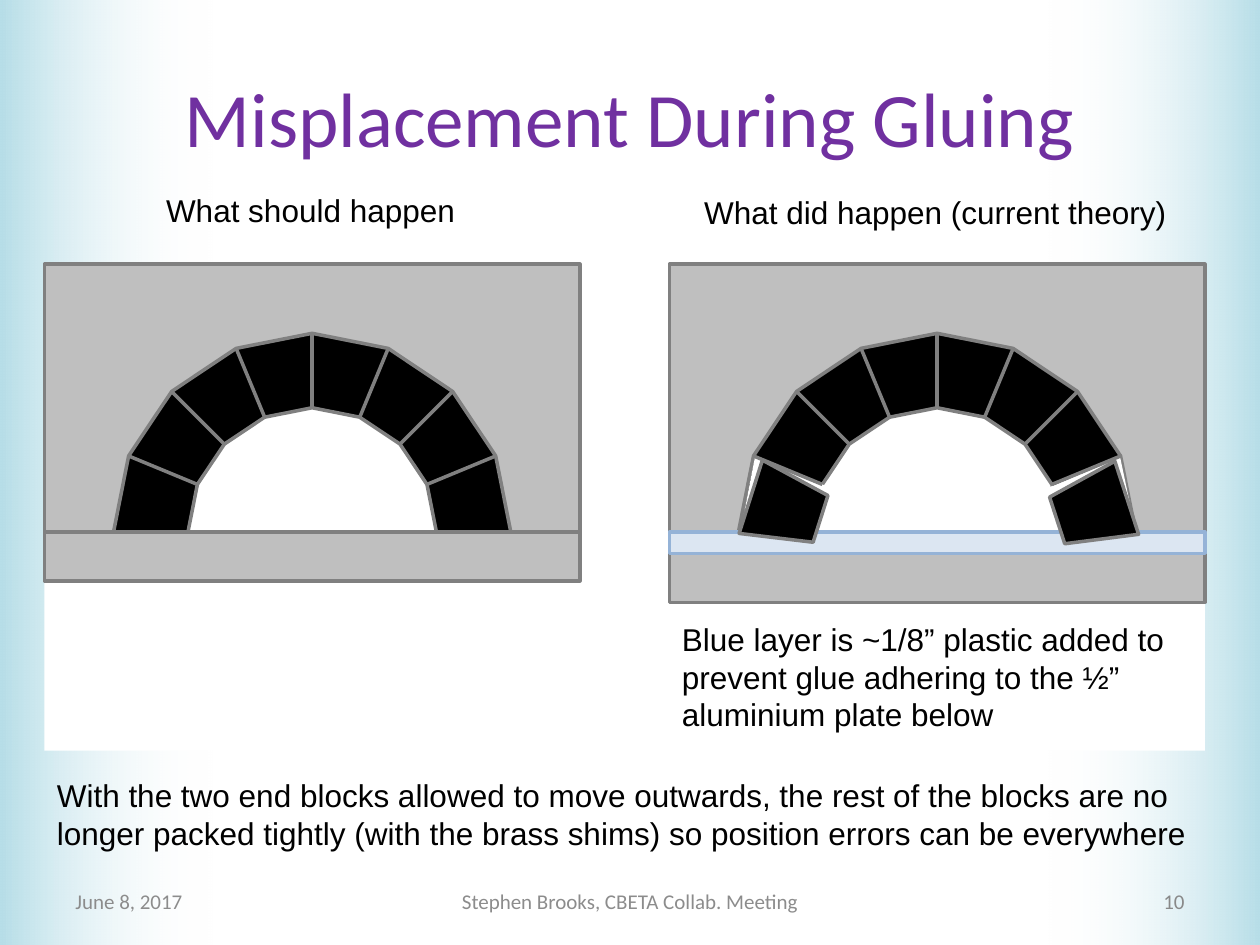
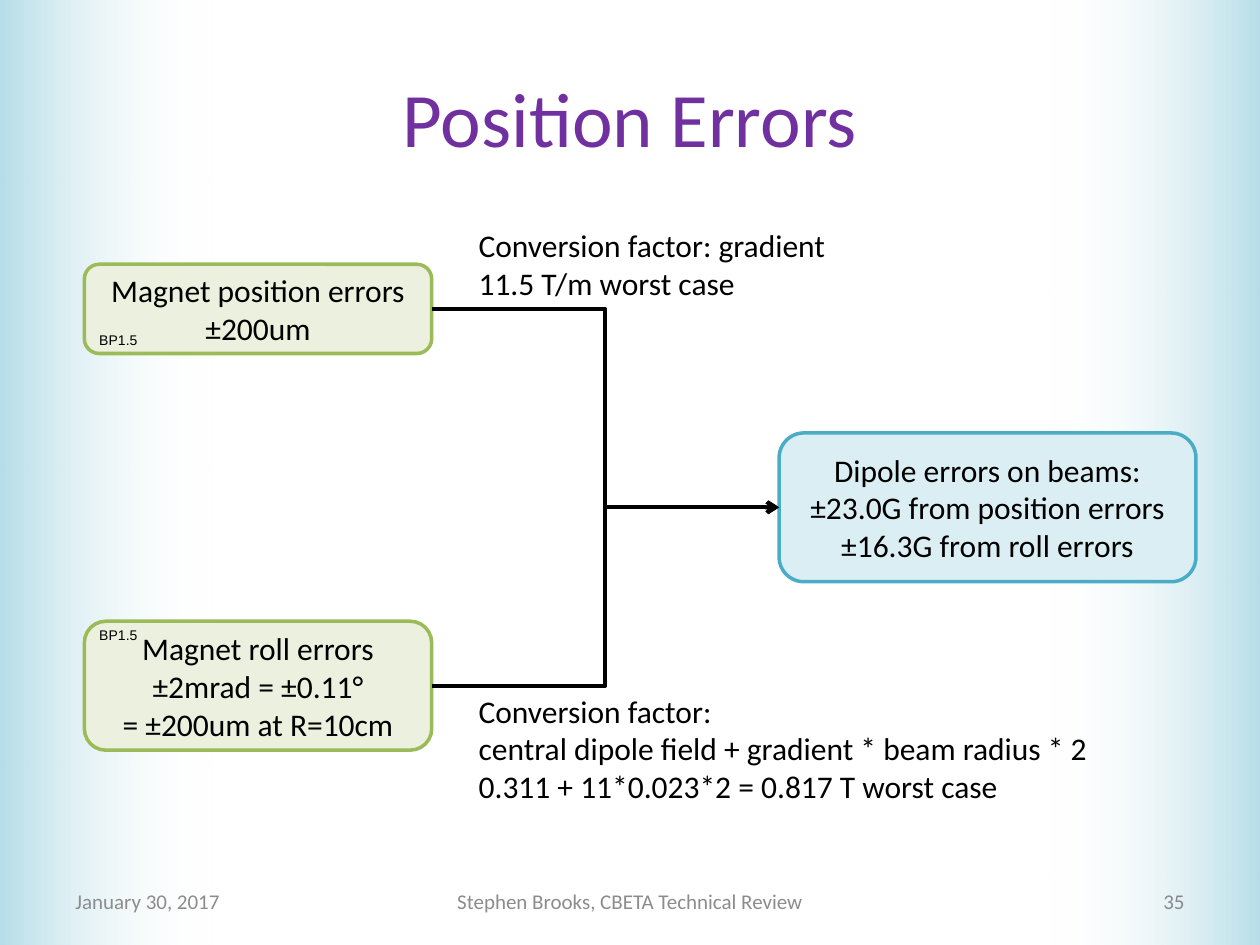
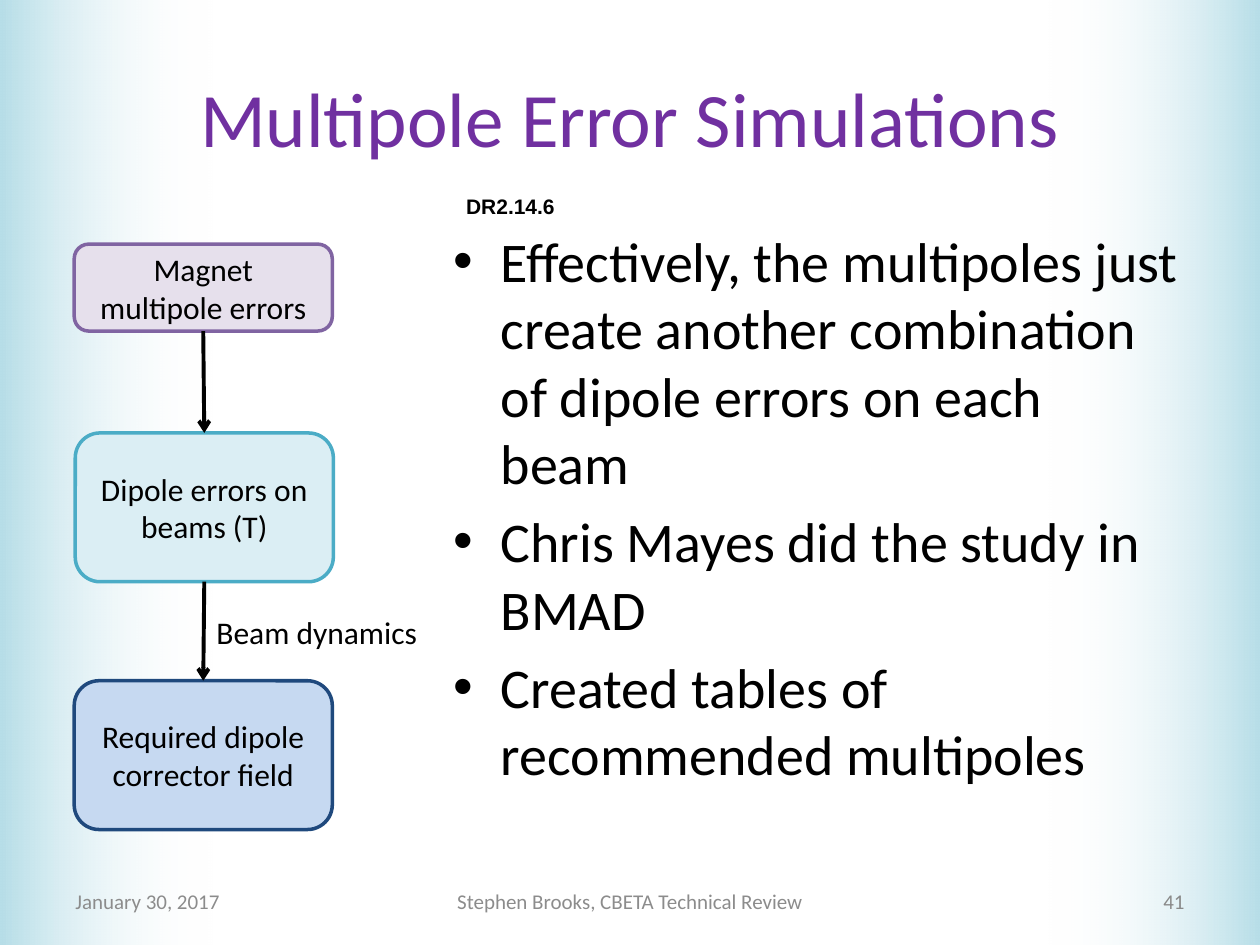
from math import cos, radians, sin

from lxml import etree
from pptx import Presentation
from pptx import util as u
from pptx.dml.color import RGBColor
from pptx.enum import shapes, text
from pptx.oxml.ns import qn

Pt = u.Pt
KIND = shapes.MSO_SHAPE
LINK = shapes.MSO_CONNECTOR
ALIGN = text.PP_ALIGN
ANCHOR = text.MSO_ANCHOR

BLACK = RGBColor(0x00, 0x00, 0x00)
WHITE = RGBColor(0xFF, 0xFF, 0xFF)
PURPLE = RGBColor(0x70, 0x30, 0xA0)
MIST = RGBColor(0xB7, 0xDE, 0xE8)
FOOT = RGBColor(0x8C, 0x8C, 0x8C)
PAGE = RGBColor(0x89, 0x89, 0x89)
STEEL = RGBColor(0xBF, 0xBF, 0xBF)
EDGE = RGBColor(0x80, 0x80, 0x80)
LAYER = RGBColor(0xDC, 0xE6, 0xF2)
RIM = RGBColor(0x95, 0xB3, 0xD7)
AQUA = (RGBColor(0xDB, 0xEE, 0xF4), RGBColor(0x4B, 0xAC, 0xC6))
GREEN = (RGBColor(0xEB, 0xF1, 0xDE), RGBColor(0x9B, 0xBB, 0x59))
LILAC = (RGBColor(0xE6, 0xE0, 0xEC), RGBColor(0x80, 0x64, 0xA2))
NAVY = (RGBColor(0xC6, 0xD9, 0xF1), RGBColor(0x1F, 0x49, 0x7D))

ARIAL = {"name": "Arial", "size": Pt(18)}
BODY = {"name": "Calibri", "size": Pt(18)}
TITLE = {"name": "Calibri", "size": Pt(44)}
SMALL = {"name": "Calibri", "size": Pt(12)}
LIST = {"name": "Calibri", "size": Pt(32)}
TAG = {"name": "Arial", "size": Pt(8)}
REF = {"name": "Arial", "size": Pt(12), "bold": True}

REVIEW = ("January 30, 2017", "Stephen Brooks, CBETA Technical Review")


def apply(obj, form):
    for key, val in form.items():
        setattr(obj, key, val)


def write(frame, lines, font, color=BLACK, align=ALIGN.LEFT, bullet=False):
    for num, line in enumerate(lines):
        para = frame.paragraphs[0] if num == 0 else frame.add_paragraph()
        para.alignment = align
        if bullet:
            props = para._p.get_or_add_pPr()
            props.set("marL", str(Pt(27)))
            props.set("indent", str(Pt(-27)))
            etree.SubElement(props, qn("a:buFont"), typeface="Arial")
            etree.SubElement(props, qn("a:buChar"), char="•")
            para.space_before = Pt(6.4 if num else 0)
        run = para.add_run()
        run.text = line
        apply(run.font, font)
        run.font.color.rgb = color


def label(slide, box, lines, font, color=BLACK, align=ALIGN.LEFT,
          wrap=True, anchor=ANCHOR.TOP, inset=None, bullet=False):
    frame = slide.shapes.add_textbox(*map(Pt, box)).text_frame
    apply(frame, {"word_wrap": wrap, "vertical_anchor": anchor})
    if not wrap:
        frame.auto_size = text.MSO_AUTO_SIZE.SHAPE_TO_FIT_TEXT
    if inset is not None:
        sides = ("left", "top", "right", "bottom")
        apply(frame, {f"margin_{side}": Pt(inset) for side in sides})
    write(frame, lines, font, color, align, bullet)


def block(slide, kind, box, fill, edge=None, turn=0, bend=None):
    shape = slide.shapes.add_shape(kind, *map(Pt, box))
    shape.shadow.inherit = False
    shape.rotation = turn
    shape.fill.solid()
    shape.fill.fore_color.rgb = fill
    if edge is None:
        shape.line.fill.background()
    else:
        shape.line.color.rgb = edge
        shape.line.width = Pt(2)
    if bend is not None:
        shape.adjustments[0] = bend
    return shape


def node(slide, box, lines, hue):
    shape = block(slide, KIND.ROUNDED_RECTANGLE, box, *hue)
    apply(shape.text_frame, {"word_wrap": True, "vertical_anchor": ANCHOR.MIDDLE})
    write(shape.text_frame, lines, BODY, align=ALIGN.CENTER)
    return shape


def wire(slide, kind, ends, color, width):
    line = slide.shapes.add_connector(kind, *map(Pt, ends))
    line.line.color.rgb = color
    line.line.width = Pt(width)
    etree.SubElement(line._element.spPr, qn("a:effectLst"))
    return line


def arrow(slide, kind, start, out, stop, into):
    line = wire(slide, kind, (0, 0, 10, 10), BLACK, 2.25)
    line.begin_connect(start, out)
    line.end_connect(stop, into)
    etree.SubElement(line.line._get_or_add_ln(), qn("a:tailEnd"), type="arrow")


def band(slide, left, turn):
    shape = block(slide, KIND.RECTANGLE, (left, 0, 121.7, 540), MIST, turn=turn)
    shape.fill.gradient()
    shape.fill.gradient_angle = 0
    for stop, color in zip(shape.fill.gradient_stops, (MIST, WHITE)):
        stop.color.rgb = color
    last = shape._element.spPr.findall(".//" + qn("a:srgbClr"))[-1]
    etree.SubElement(last, qn("a:alpha"), val="0")


def start(deck, title, date, event, page):
    slide = deck.slides.add_slide(deck.slide_layouts[6])
    band(slide, 598.3, 180)
    band(slide, 0, 0)
    label(slide, (36, 21.6, 648, 90), [title], TITLE, PURPLE,
          ALIGN.CENTER, anchor=ANCHOR.MIDDLE)
    for left, width, line, color, align in (
            (36, 168, date, FOOT, ALIGN.LEFT),
            (246, 228, event, FOOT, ALIGN.CENTER),
            (516, 168, page, PAGE, ALIGN.RIGHT)):
        label(slide, (left, 500.5, width, 28.75), [line], SMALL, color,
              align, anchor=ANCHOR.MIDDLE)
    return slide


def arch(slide, left, drop=0, gaps=()):
    wide, base, outer, inner = 306, 304, 113.5, 71
    mid = left + wide / 2
    block(slide, KIND.RECTANGLE, (left, 151, wide, 153.5), STEEL, EDGE)
    for rad, fill in ((outer, BLACK), (inner, WHITE)):
        ring = (mid - rad, base - rad, 2 * rad, 2 * rad)
        block(slide, KIND.STAR_8_POINT, ring, fill, EDGE, bend=0.5)
    for box, turn, bend, flip in gaps:
        gap = block(slide, KIND.PARALLELOGRAM, box, WHITE, turn=turn, bend=bend)
        if flip:
            gap._element.spPr.xfrm.set("flipV", "1")
    block(slide, KIND.RECTANGLE, (left, 318, wide, 111), WHITE)
    block(slide, KIND.RECTANGLE, (left, base + drop, wide, 28), STEEL, EDGE)
    for step in range(1, 8):
        turn = radians(22.5 * step)
        ends = [val for rad in (inner, outer)
                for val in (mid + rad * cos(turn), base - rad * sin(turn))]
        wire(slide, LINK.STRAIGHT, ends, EDGE, 2)


def gluing(deck):
    slide = start(deck, "Misplacement During Gluing", "June 8, 2017",
                  "Stephen Brooks, CBETA Collab. Meeting", "10")
    label(slide, (87.8, 105.8, 181.5, 29), ["What should happen"], ARIAL, wrap=False)
    label(slide, (395.3, 106.5, 281, 29), ["What did happen (current theory)"],
          ARIAL, wrap=False)
    arch(slide, 25.4)
    arch(slide, 382.5, 12.25, (
        ((405.4, 282.2, 90.7, 56.9), 101, 0.21, False),
        ((576, 283, 90.7, 57.6), 258, 0.19, True)))
    block(slide, KIND.RECTANGLE, (382.5, 304, 306, 12.25), LAYER, RIM)
    for left, top, turn in ((602, 270, 252), (427, 269.3, 107.6)):
        block(slide, KIND.TRAPEZOID, (left, top, 43.9, 41.8), BLACK, EDGE, turn, 0.19)
    label(slide, (382.5, 350.6, 306, 72.7),
          ["Blue layer is ~1/8” plastic added to prevent glue adhering to the ½” "
           "aluminium plate below"], ARIAL)
    label(slide, (25.4, 440, 663, 51),
          ["With the two end blocks allowed to move outwards, the rest of the blocks "
           "are no longer packed tightly (with the brass shims) so position errors "
           "can be everywhere"], ARIAL)


def position(deck):
    slide = start(deck, "Position Errors", *REVIEW, "35")
    beam = node(slide, (445.2, 247.4, 238.2, 85),
                ["Dipole errors on beams:", "±23.0G from position errors",
                 "±16.3G from roll errors"], AQUA)
    shift = node(slide, (48.2, 151, 198.5, 51),
                 ["Magnet position errors", "±200um"], GREEN)
    roll = node(slide, (48.2, 355, 198.5, 73.7),
                ["Magnet roll errors", "±2mrad = ±0.11°", "= ±200um at R=10cm"], GREEN)
    for cause in (roll, shift):
        arrow(slide, LINK.ELBOW, cause, 3, beam, 1)
    label(slide, (266.4, 125.5, 214.5, 51),
          ["Conversion factor: gradient", "11.5 T/m worst case"], BODY, wrap=False)
    label(slide, (266.4, 391.7, 367, 72.7),
          ["Conversion factor:", "central dipole field + gradient * beam radius * 2",
           "0.311 + 11*0.023*2 = 0.817 T worst case"], BODY, wrap=False)
    for top in (186.5, 355):
        label(slide, (53.9, top, 28, 15), ["BP1.5"], TAG, wrap=False, inset=2.83)


def multipole(deck):
    slide = start(deck, "Multipole Error Simulations", *REVIEW, "41")
    label(slide, (252, 126, 432, 356.4),
          ["Effectively, the multipoles just create another combination of dipole "
           "errors on each beam", "Chris Mayes did the study in BMAD",
           "Created tables of recommended multipoles"], LIST, bullet=True)
    beam = node(slide, (43, 247.4, 147.5, 85), ["Dipole errors on beams (T)"], AQUA)
    magnet = node(slide, (42.4, 139.5, 147.5, 49.7), ["Magnet multipole errors"], LILAC)
    field = node(slide, (42.4, 389, 147.5, 85), ["Required dipole corrector field"], NAVY)
    for cause, result in ((beam, field), (magnet, beam)):
        arrow(slide, LINK.STRAIGHT, cause, 2, result, 0)
    label(slide, (116.6, 346.5, 130.3, 29), ["Beam dynamics"], BODY, wrap=False)
    label(slide, (263.5, 108, 57, 20), ["DR2.14.6"], REF, wrap=False, inset=2.83)


def main():
    deck = Presentation()
    deck.slide_width, deck.slide_height = Pt(720), Pt(540)
    gluing(deck)
    position(deck)
    multipole(deck)
    deck.save("out.pptx")


if __name__ == "__main__":
    main()
